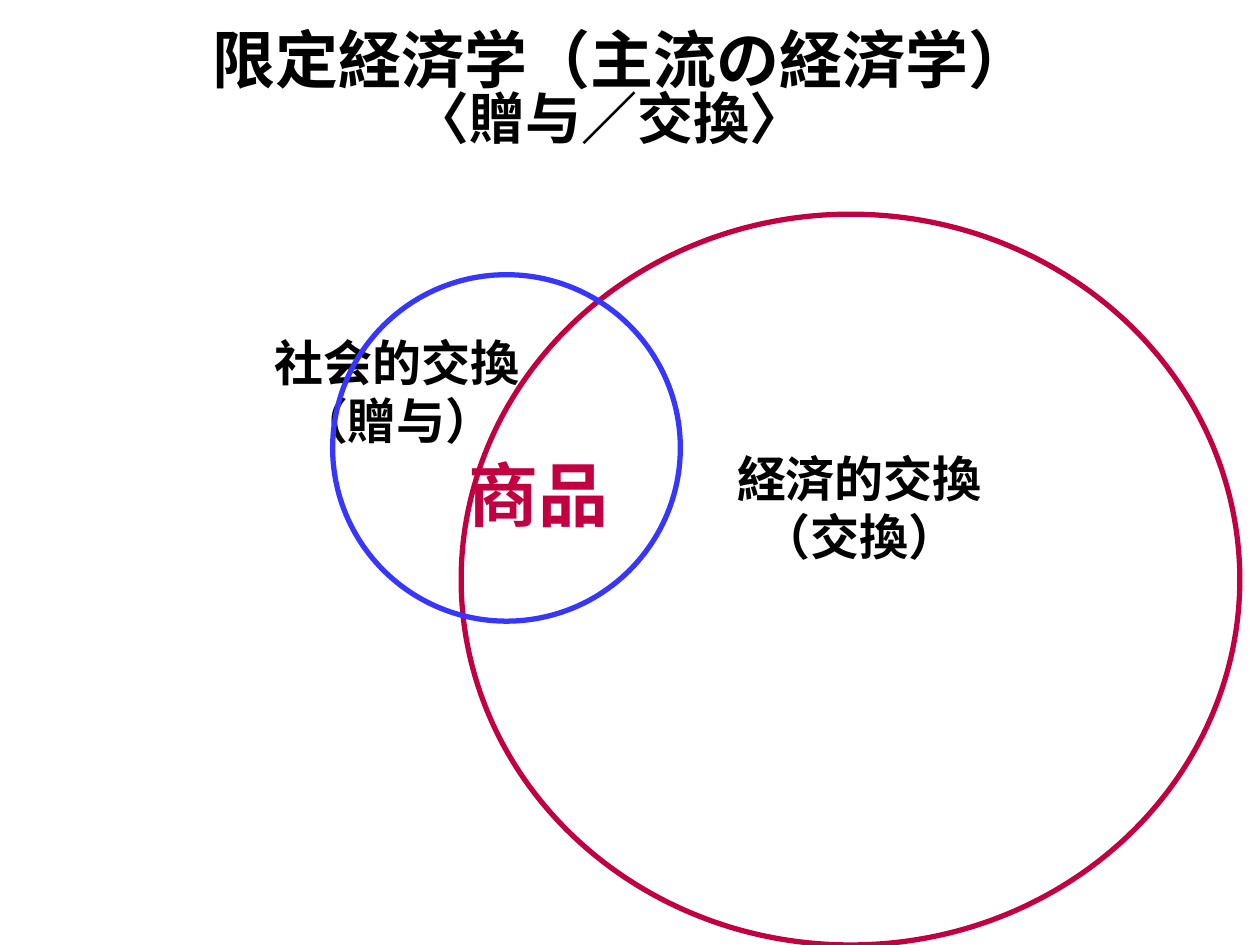
from pptx import Presentation
from pptx.dml.color import RGBColor
from pptx.enum.shapes import MSO_SHAPE
from pptx.enum.text import MSO_ANCHOR, PP_ALIGN
from pptx.oxml.ns import qn
from pptx.util import Inches, Pt
from lxml.etree import SubElement

FONT = "Noto Sans CJK JP"
BLACK = RGBColor(0x00, 0x00, 0x00)
CRIMSON = RGBColor(0xC2, 0x00, 0x41)
BLUE = RGBColor(0x36, 0x36, 0xFF)
LINE_HEIGHT = 1.18


def add_circle(page, left, top, width, height, color):
    circle = page.shapes.add_shape(
        MSO_SHAPE.OVAL, Inches(left), Inches(top), Inches(width), Inches(height))
    circle.shadow.inherit = False
    circle.fill.background()
    circle.line.color.rgb = color
    circle.line.width = Pt(3)


def add_label(page, text, left, top, width, height, size,
              color=BLACK, align=PP_ALIGN.CENTER, anchor=MSO_ANCHOR.TOP):
    box = page.shapes.add_textbox(
        Inches(left), Inches(top), Inches(width), Inches(height))
    frame = box.text_frame
    frame.word_wrap = True
    frame.vertical_anchor = anchor
    para = frame.paragraphs[0]
    para.text = text
    para.alignment = align
    para.line_spacing = Pt(round(size * LINE_HEIGHT))
    font = para.font
    font.name = FONT
    font.size = Pt(size)
    font.bold = True
    font.color.rgb = color
    # Japanese text takes its typeface from the East Asian font
    defaults = para._p.pPr.find(qn("a:defRPr"))
    SubElement(defaults, qn("a:ea")).set("typeface", FONT)


def main():
    deck = Presentation()
    deck.slide_width, deck.slide_height = Inches(10), Inches(7.5)
    page = deck.slides.add_slide(deck.slide_layouts[6])

    add_label(page, "限定経済学（主流の経済学）", 0.04, 0, 9.8, 0.94, 36,
              anchor=MSO_ANCHOR.MIDDLE)
    add_circle(page, 3.66, 1.7, 6.18, 5.8, CRIMSON)
    add_label(page, "社会的交換（贈与）", 1.93, 2.6, 2.44, 1.03, 28)
    add_label(page, "経済的交換\v（交換）", 5.48, 3.52, 2.68, 1.03, 28)
    add_label(page, "〈贈与／交換〉", 0.35, 0.62, 8.98, 0.63, 32)
    add_circle(page, 2.64, 2.18, 2.76, 2.75, BLUE)
    add_label(page, "商品", 3.42, 3.55, 1.51, 0.77, 40, CRIMSON, PP_ALIGN.RIGHT)

    deck.save("out.pptx")


if __name__ == "__main__":
    main()
